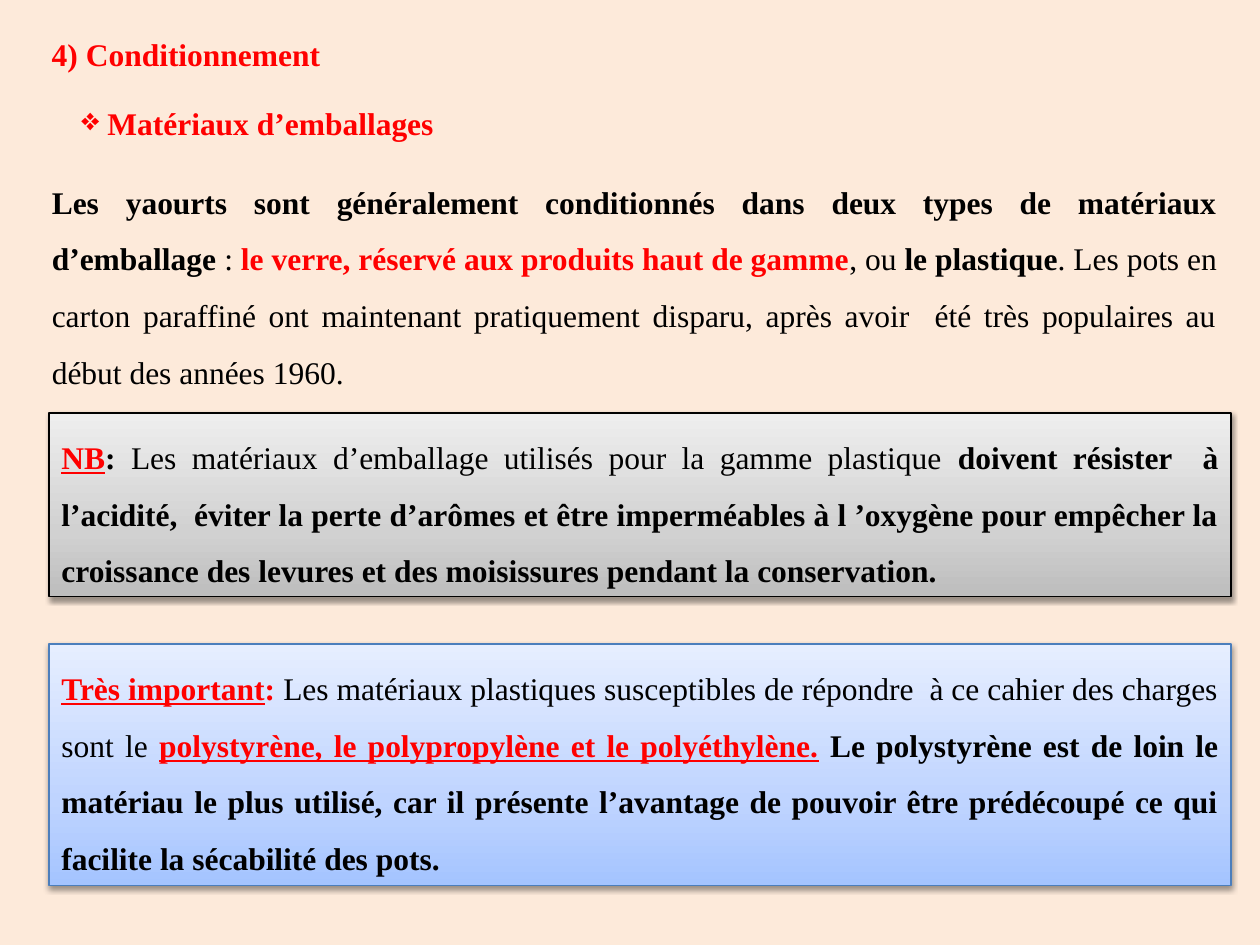
from lxml import etree
from pptx import Presentation
from pptx.dml.color import RGBColor
from pptx.enum.shapes import MSO_SHAPE
from pptx.enum.text import MSO_ANCHOR, PP_ALIGN
from pptx.oxml import parse_xml
from pptx.oxml.ns import qn
from pptx.util import Pt

NAMESPACE = 'xmlns:a="http://schemas.openxmlformats.org/drawingml/2006/main"'
RED, BLACK = "FF0000", "000000"


def color(hex_string):
    return RGBColor.from_string(hex_string)


def write_runs(text_frame, runs):
    """Each run is text, colour and style letters: b bold, u underline."""
    paragraph = text_frame.paragraphs[0]
    for text, run_color, style in runs:
        run = paragraph.add_run()
        run.text = text
        run.font.name = "Times New Roman"
        run.font.size = Pt(18)
        run.font.bold = "b" in style
        run.font.underline = "u" in style
        run.font.color.rgb = color(run_color)
    return paragraph


presentation = Presentation()
presentation.slide_width = Pt(720)
presentation.slide_height = Pt(540)
slide = presentation.slides.add_slide(presentation.slide_layouts[6])
slide.background.fill.solid()
slide.background.fill.fore_color.rgb = color("FDEADA")

# Text boxes: left, top, width, height, wrap, runs
text_boxes = [
    (22.5, 90, 680, 138, True, [
        ("Les yaourts sont généralement conditionnés dans deux types de "
         "matériaux d’emballage ", BLACK, "b"),
        (": ", BLACK, ""),
        ("le verre, réservé aux produits haut de gamme", RED, "b"),
        (", ou ", BLACK, ""),
        ("le plastique", BLACK, "b"),
        (". Les pots en carton paraffiné ont maintenant pratiquement disparu, "
         "après avoir  été très populaires au début des années 1960.", BLACK, ""),
    ]),
    (22.5, 16.5, 169, 29, False, [("4) Conditionnement", RED, "b")]),
    (39.5, 56, 224, 29, False, [(" Matériaux d’emballages", RED, "b")]),
]
for left, top, width, height, wrap, runs in text_boxes:
    text_box = slide.shapes.add_textbox(Pt(left), Pt(top), Pt(width), Pt(height))
    text_box.text_frame.word_wrap = wrap
    paragraph = write_runs(text_box.text_frame, runs)
    if wrap:
        paragraph.alignment = PP_ALIGN.JUSTIFY
        paragraph.line_spacing = 1.5

# Diamond bullet on the subheading, the last box
bullet = etree.SubElement(paragraph._p.get_or_add_pPr(), qn("a:buChar"))
bullet.set("char", "❖")

# Framed notes: top, height, line colour, gradient from bottom to top, runs
notes = [
    (236, 105, BLACK, ("BDBDBD", "D1D1D1", "EEEEEE"), [
        ("NB", RED, "bu"),
        (": ", BLACK, "b"),
        ("Les matériaux d’emballage utilisés pour la gamme plastique ", BLACK, ""),
        ("doivent résister  à l’acidité,  éviter la perte d’arômes et être "
         "imperméables à l ’oxygène pour empêcher la croissance des levures et "
         "des moisissures pendant la conservation.", BLACK, "b"),
    ]),
    (368, 138, "4B7EBC", ("A4C4FF", "BFD4FF", "E6EEFF"), [
        ("Très important", RED, "bu"),
        (": ", RED, "b"),
        ("Les matériaux plastiques susceptibles de répondre  à ce cahier des "
         "charges sont le ", BLACK, ""),
        ("polystyrène, le polypropylène et le polyéthylène.", RED, "bu"),
        (" ", BLACK, ""),
        ("Le polystyrène est de loin le matériau le plus utilisé, car il "
         "présente l’avantage de pouvoir être prédécoupé ce qui facilite la "
         "sécabilité des pots.", BLACK, "b"),
    ]),
]
for top, height, line_color, gradient_colors, runs in notes:
    shape = slide.shapes.add_shape(
        MSO_SHAPE.RECTANGLE, Pt(28), Pt(top), Pt(675.5), Pt(height))
    shape.line.color.rgb = color(line_color)
    shape.line.width = Pt(0.75)

    # Gradient fill
    stops = "".join(
        f'<a:gs pos="{position}"><a:srgbClr val="{stop_color}"/></a:gs>'
        for position, stop_color in zip((0, 35000, 100000), gradient_colors))
    shape._element.spPr.find(qn("a:prstGeom")).addnext(parse_xml(
        f'<a:gradFill {NAMESPACE} rotWithShape="1"><a:gsLst>{stops}</a:gsLst>'
        '<a:lin ang="16200000" scaled="1"/></a:gradFill>'))

    # Soft shadow below
    shape._element.spPr.append(parse_xml(
        f'<a:effectLst {NAMESPACE}><a:outerShdw blurRad="{Pt(3.1)}" '
        f'dist="{Pt(1.6)}" dir="5400000" rotWithShape="0">'
        f'<a:srgbClr val="{BLACK}"><a:alpha val="38000"/></a:srgbClr>'
        '</a:outerShdw></a:effectLst>'))

    shape.text_frame.word_wrap = True
    shape.text_frame.vertical_anchor = MSO_ANCHOR.TOP
    paragraph = write_runs(shape.text_frame, runs)
    paragraph.alignment = PP_ALIGN.JUSTIFY
    paragraph.line_spacing = 1.5

presentation.save("out.pptx")
